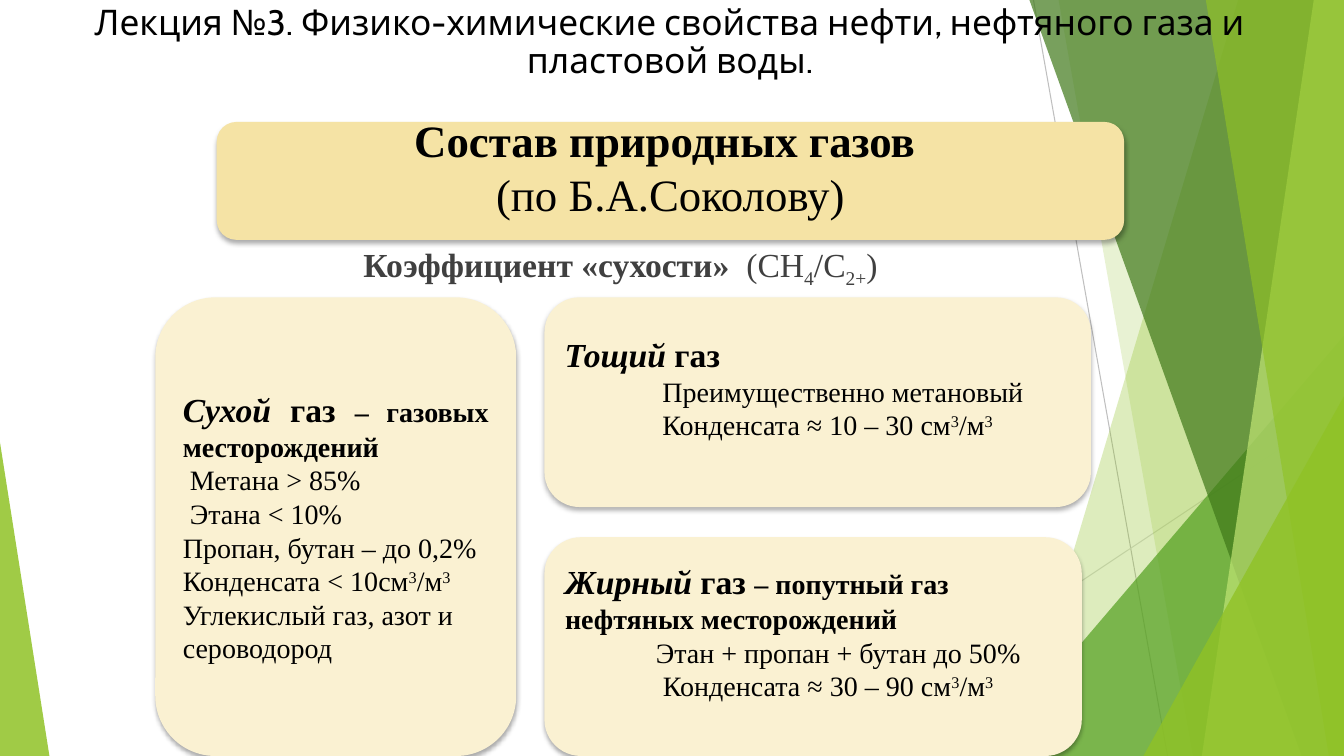
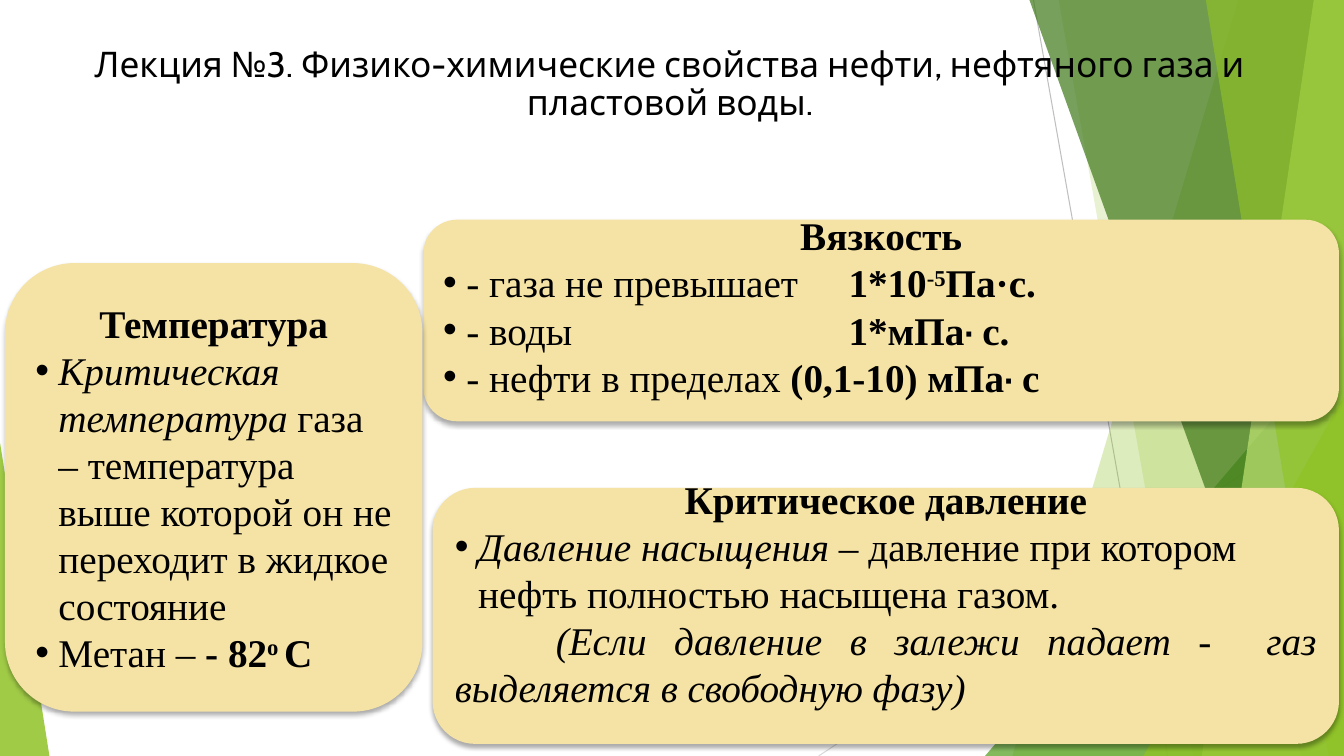
from dataclasses import dataclass

from lxml import etree
from pptx import Presentation
from pptx.dml.color import RGBColor
from pptx.enum.shapes import MSO_CONNECTOR, MSO_SHAPE
from pptx.enum.text import MSO_ANCHOR, PP_ALIGN
from pptx.oxml.ns import qn
from pptx.util import Inches, Pt

WIDTH, HEIGHT = 13.33, 7.5
LEFT, CENTER, JUSTIFY = PP_ALIGN.LEFT, PP_ALIGN.CENTER, PP_ALIGN.JUSTIFY
TOP, MIDDLE = MSO_ANCHOR.TOP, MSO_ANCHOR.MIDDLE
TRIANGLE, ROUNDED = MSO_SHAPE.ISOSCELES_TRIANGLE, MSO_SHAPE.ROUNDED_RECTANGLE
STRAIGHT = MSO_CONNECTOR.STRAIGHT

BLACK = RGBColor(0x00, 0x00, 0x00)
DARK_GREY = RGBColor(0x40, 0x40, 0x40)
GREY = RGBColor(0xBF, 0xBF, 0xBF)
LIGHT_GREY = RGBColor(0xD9, 0xD9, 0xD9)
LIME = RGBColor(0x90, 0xC2, 0x26)
PALE_LIME = RGBColor(0xC0, 0xE4, 0x74)
GREEN = RGBColor(0x54, 0xA0, 0x21)
DEEP_GREEN = RGBColor(0x3F, 0x78, 0x19)
SAND = RGBColor(0xF5, 0xE3, 0xA5)
CREAM = RGBColor(0xFA, 0xF1, 0xD2)

TITLE_FONT, BODY_FONT = "Cabin", "Times New Roman"
TITLE = "Лекция №3. Физико-химические свойства нефти, нефтяного газа и пластовой воды."
TITLE_SIZE = 25.2
BULLET_INDENT = 0.23
BASELINES = {"^": "30000", "_": "-25000"}


@dataclass
class Para:
    """Runs are (text, flags): b bold, i italic, ^ raised, _ lowered, h 24 pt, t title font."""
    runs: list
    align: PP_ALIGN = LEFT
    bullet: bool = False
    indent: float = 0
    first_line: float = 0
    tab: float = 0


@dataclass
class Card:
    box: tuple
    fill: RGBColor
    size: float
    paras: list
    space_below: float = 0


# Scenery: upper edge (x1, x2), lower edge (x1, x2), colour, opacity in percent
BANDS = {
    "wide": ((12.28, WIDTH), (10.04, WIDTH), LIME, 30),
    "pale": ((10.5, WIDTH), (11.83, WIDTH), LIME, 20),
    "deep": ((10.21, WIDTH), (12.91, WIDTH), DEEP_GREEN, 70),
    "edge": ((13.03, WIDTH), (11.92, WIDTH), PALE_LIME, 70),
    "top": ((11.96, WIDTH), (13.18, WIDTH), LIME, 65),
}
# Left, top, width, apex position, colour, opacity; all stand on the lower edge
PEAKS = {
    "back": (9.77, 3.33, 3.56, 1, GREEN, 72),
    "front": (11.34, 3.93, 1.99, 1, LIME, 80),
    "left": (0, 4.39, 0.49, 0, LIME, 85),
}
SCENERY_ORDER = ("wide", "pale", "back", "deep", "edge", "top", "front", "left")
RAYS = [((10.25, 0), (11.58, HEIGHT), GREY), ((WIDTH, 4.03), (8.12, HEIGHT), LIGHT_GREY)]

DRYNESS = Para([("Коэффициент «сухости» ", "b"), (" (СН", ""), ("4", "_"),
                ("/С", ""), ("2+", "_"), (")", "")], CENTER)


def condensate(amount, indent=0.0):
    return Para([(f"Конденсата {amount}", ""), ("3", "^"), ("/м", ""), ("3", "^")],
                indent=indent)


GAS_CARDS = [
    Card((2.15, 1.21, 9, 1.17), SAND, 32, [
        Para([("Состав природных газов ", "b")], CENTER),
        Para([("(по Б.А.Соколову)", "")], CENTER),
    ], 0.29),
    Card((1.54, 2.95, 3.58, 4.55), CREAM, 20, [
        Para([("Сухой", "bih"), (" газ ", "bh"), ("– газовых месторождений", "b")], JUSTIFY),
        Para([("Метана > 85%", "")], indent=0.07),
        Para([("Этана < 10%", "")], indent=0.07),
        Para([("Пропан, бутан – до 0,2%", "")]),
        condensate("< 10см"),
        Para([("Углекислый газ, азот и сероводород", "")]),
    ]),
    Card((5.4, 2.95, 5.42, 2.08), CREAM, 20, [
        Para([("Тощий", "bih"), (" газ", "bh")]),
        Para([("Преимущественно метановый", "")], indent=0.97),
        condensate("≈ 10 – 30 см", 0.97),
    ], 0.29),
    Card((5.4, 5.33, 5.33, 2.17), CREAM, 20, [
        Para([("Жирный", "bih"), (" газ ", "bh"),
              ("– попутный газ нефтяных месторождений", "b")]),
        Para([("Этан + пропан + бутан до 50%", "")], indent=0.9),
        condensate("≈ 30 – 90 см", 0.97),
    ], 0.29),
]

PROPERTY_CARDS = [
    Card((4.2, 2.18, 9.08, 2), SAND, 28, [
        Para([("Вязкость", "b")], CENTER),
        Para([("- газа не превышает\t", ""), ("1*10", "b"), ("-5", "b^"), ("Па·с.", "b")],
             bullet=True, tab=4.02),
        Para([("- воды\t", ""), ("1*мПа", "b"), ("· ", "bt"), ("с.", "b")],
             bullet=True, tab=4.02),
        Para([("- нефти в пределах ", ""), ("(0,1-10) мПа", "b"), ("· ", "bt"), ("с", "b")],
             bullet=True),
    ], 0.29),
    Card((0.05, 2.61, 4.14, 4.45), SAND, 28, [
        Para([("Температура", "b")], CENTER),
        Para([("Критическая температура", "i"),
              (" газа – температура выше которой он не переходит в жидкое состояние", "")],
             bullet=True),
        Para([("Метан – ", ""), ("- 82", "b"), ("о ", "b^"), ("С", "b")], bullet=True),
    ]),
    Card((4.29, 4.84, 8.99, 2.54), SAND, 28, [
        Para([("Критическое давление", "b")], CENTER),
        Para([("Давление насыщения – ", "i"),
              ("давление при котором нефть полностью насыщена газом.", "")], bullet=True),
        Para([("(Если давление в залежи падает -  газ выделяется в свободную фазу)", "i")],
             JUSTIFY, first_line=1),
    ], 0.45),
]


def inches(*lengths):
    return [Inches(length) for length in lengths]


def paint(shape, color, opacity=100):
    shape.shadow.inherit = False
    shape.line.fill.background()
    shape.fill.solid()
    shape.fill.fore_color.rgb = color
    if opacity < 100:
        tint = shape.fill._xPr.find(f".//{qn('a:srgbClr')}")
        etree.SubElement(tint, qn("a:alpha"), val=str(opacity * 1000))


def cast_shadow(shape):
    effects = shape._element.spPr.find(qn("a:effectLst"))
    outer = etree.SubElement(effects, qn("a:outerShdw"), blurRad=str(Pt(3.5)),
                             dist=str(Pt(2.2)), dir="5400000", rotWithShape="0")
    tint = etree.SubElement(outer, qn("a:srgbClr"), val=str(BLACK))
    etree.SubElement(tint, qn("a:alpha"), val="32000")


def add_scenery(slide):
    for start, end, color in RAYS:
        ray = slide.shapes.add_connector(STRAIGHT, *inches(*start, *end))
        ray.line.color.rgb = color
        ray.line.width = Pt(0.75)
        etree.SubElement(ray._element.spPr, qn("a:effectLst"))
    for name in SCENERY_ORDER:
        if name in BANDS:
            (x1, x2), (x3, x4), color, opacity = BANDS[name]
            outline = slide.shapes.build_freeform(*inches(x1, 0))
            outline.add_line_segments(
                [inches(x2, 0), inches(x4, HEIGHT), inches(x3, HEIGHT)], close=True)
            part = outline.convert_to_shape()
        else:
            left, top, width, apex, color, opacity = PEAKS[name]
            part = slide.shapes.add_shape(TRIANGLE, *inches(left, top, width, HEIGHT - top))
            part.adjustments[0] = apex
        paint(part, color, opacity)


def format_paragraph(paragraph, para):
    """Set alignment, indents, bullet and tab stop."""
    paragraph.alignment = para.align
    props = paragraph._p.get_or_add_pPr()
    indent = BULLET_INDENT if para.bullet else para.indent
    first_line = -BULLET_INDENT if para.bullet else para.first_line
    props.set("marL", str(Inches(indent)))
    props.set("indent", str(Inches(first_line)))
    if para.bullet:
        etree.SubElement(props, qn("a:buFont"), typeface="Arial")
        etree.SubElement(props, qn("a:buChar"), char="•")
    if para.tab:
        stops = etree.SubElement(props, qn("a:tabLst"))
        etree.SubElement(stops, qn("a:tab"), pos=str(Inches(para.tab)), algn="l")


def write(shape, paras, size, anchor, font=BODY_FONT, color=BLACK, space_below=0.0,
          line_spacing=1.0):
    frame = shape.text_frame
    frame.word_wrap = True
    frame.vertical_anchor = anchor
    frame.margin_bottom = Inches(0.05 + space_below)
    for number, para in enumerate(paras):
        paragraph = frame.add_paragraph() if number else frame.paragraphs[0]
        format_paragraph(paragraph, para)
        paragraph.line_spacing = line_spacing
        paragraph.font.name = font
        paragraph.font.size = Pt(size)
        paragraph.font.color.rgb = color
        for text, flags in para.runs:
            run = paragraph.add_run()
            run.text = text
            run.font.bold = "b" in flags
            run.font.italic = "i" in flags
            if "h" in flags:
                run.font.size = Pt(24)
            if "t" in flags:
                run.font.name = TITLE_FONT
            for flag, shift in BASELINES.items():
                if flag in flags:
                    run._r.get_or_add_rPr().set("baseline", shift)


def add_card(slide, card):
    shape = slide.shapes.add_shape(ROUNDED, *inches(*card.box))
    paint(shape, card.fill)
    cast_shadow(shape)
    write(shape, card.paras, card.size, MIDDLE, space_below=card.space_below)


def add_slide(deck, cards, title_top):
    slide = deck.slides.add_slide(deck.slide_layouts[6])
    add_scenery(slide)
    for card in cards:
        add_card(slide, card)
    title = slide.shapes.add_textbox(*inches(0.74, title_top, 11.81, 0.92))
    write(title, [Para([(TITLE, "")], CENTER)], TITLE_SIZE, TOP, TITLE_FONT, line_spacing=0.9)
    return slide


def main():
    deck = Presentation()
    deck.slide_width, deck.slide_height = inches(WIDTH, HEIGHT)
    gases = add_slide(deck, GAS_CARDS, 0)
    dryness = gases.shapes.add_textbox(*inches(0.25, 2.37, 11.81, 0.5))
    write(dryness, [DRYNESS], 24, TOP, color=DARK_GREY)
    add_slide(deck, PROPERTY_CARDS, 0.42)
    deck.save("out.pptx")


if __name__ == "__main__":
    main()
